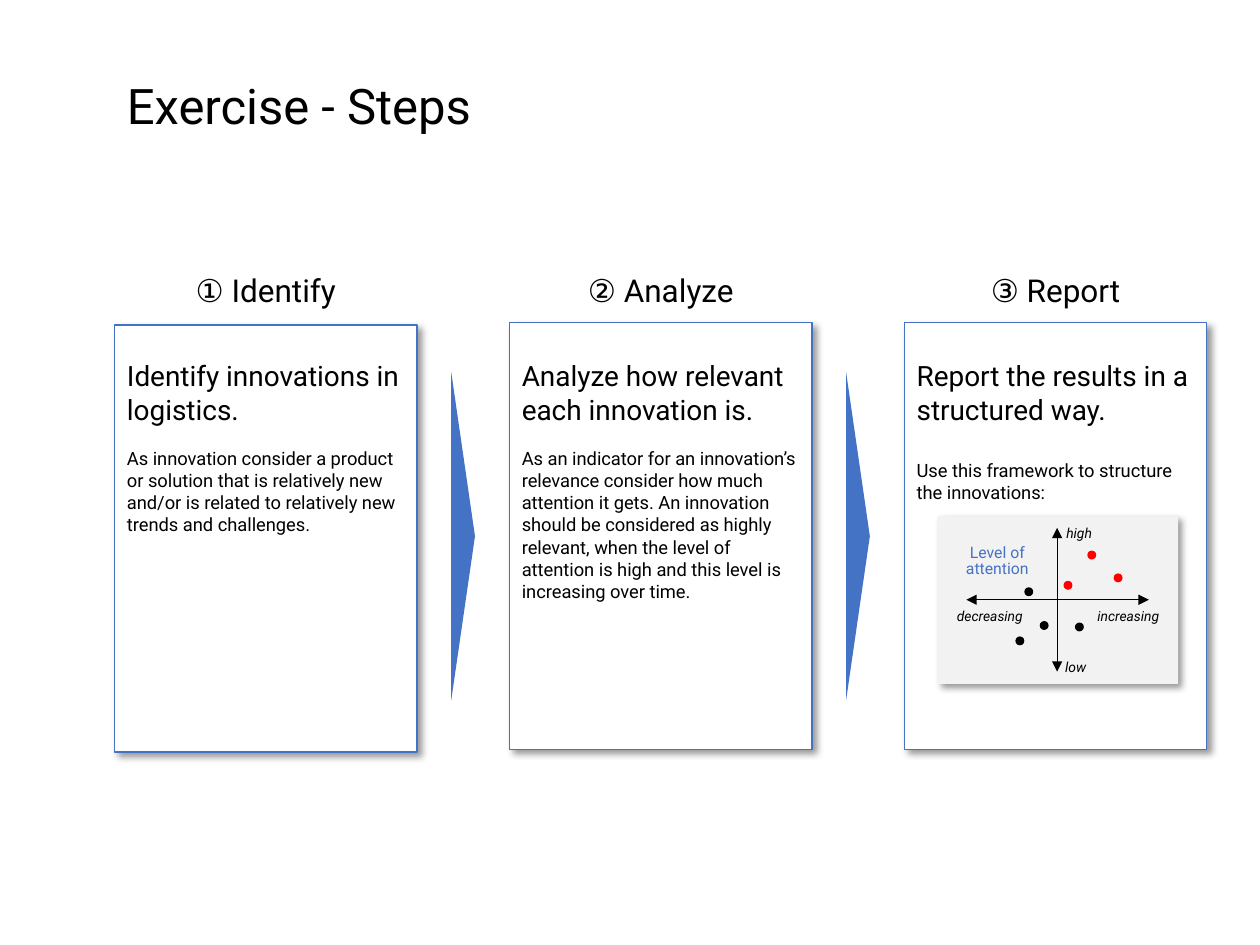
from dataclasses import dataclass

from lxml.etree import SubElement
from pptx import Presentation
from pptx.dml.color import RGBColor
from pptx.enum.shapes import MSO_CONNECTOR, MSO_SHAPE
from pptx.enum.text import MSO_ANCHOR, PP_ALIGN
from pptx.oxml.ns import qn
from pptx.util import Cm, Pt


@dataclass(frozen=True)
class Theme:
    font: str = "Roboto"
    black: str = "000000"
    white: str = "FFFFFF"
    blue: str = "4472C4"
    red: str = "FF0000"
    panel: str = "F2F2F2"
    title: float = 28
    heading: float = 18
    lead: float = 16
    body: float = 10.5
    caption: float = 9
    label: float = 7.9


THEME = Theme()
LEFT, PITCH, WIDTH = 2.31, 7.96, 6.1
CARD_HEIGHT = 8.61
STEPS = [
    ("① Identify", 6.55, "Identify innovations in logistics.", 12.3,
     "As innovation consider a product or solution that is relatively new "
     "and/or is related to relatively new trends and challenges."),
    ("② Analyze", 6.5, "Analyze how relevant each innovation is.", 12.3,
     "As an indicator for an innovation’s relevance consider how much "
     "attention it gets. An innovation should be considered as highly "
     "relevant, when the level of attention is high and this level is "
     "increasing over time."),
    ("③ Report", 6.5, "Report the results in a structured way.", 18.75,
     "Use this framework to structure the innovations:"),
]
AXIS_LABELS = [
    ("high", 20.8, 10.46),
    ("low", 20.73, 13.16),
    ("decreasing", 19, 12.12),
    ("increasing", 21.79, 12.12),
]
RED_DOTS = [(21.92, 11.1), (21.44, 11.71), (22.45, 11.56)]
BLACK_DOTS = [(20.65, 11.84), (20.47, 12.83), (21.67, 12.55), (20.96, 12.52)]


def add_shadow(sp):
    effects = sp._element.spPr.find(qn("a:effectLst"))
    shadow = SubElement(effects, qn("a:outerShdw"), blurRad=str(Pt(4)),
                        dist=str(Pt(3)), dir="2700000", algn="tl", rotWithShape="0")
    color = SubElement(shadow, qn("a:srgbClr"), val=THEME.black)
    SubElement(color, qn("a:alpha"), val="40000")


def add_box(s, kind, x, y, w, h, fill, line=None, shadow=False):
    sp = s.shapes.add_shape(kind, Cm(x), Cm(y), Cm(w), Cm(h))
    sp.shadow.inherit = False
    sp.fill.solid()
    sp.fill.fore_color.rgb = RGBColor.from_string(fill)
    if line:
        sp.line.color.rgb = RGBColor.from_string(line)
        sp.line.width = Pt(0.75)
    else:
        sp.line.fill.background()
    if shadow:
        add_shadow(sp)
    return sp


def add_run(p, text, size, color=THEME.black, italic=False):
    r = p.add_run()
    r.text = text
    r.font.name = THEME.font
    r.font.size = Pt(size)
    r.font.italic = italic
    r.font.color.rgb = RGBColor.from_string(color)


def add_text_frame(s, x, y, w, h):
    tf = s.shapes.add_textbox(Cm(x), Cm(y), Cm(w), Cm(h)).text_frame
    tf.word_wrap = True
    return tf


def add_centered(s, text, x, y, w, h, size, color=THEME.black, italic=False):
    p = add_text_frame(s, x, y, w, h).paragraphs[0]
    p.alignment = PP_ALIGN.CENTER
    add_run(p, text, size, color, italic)
    return p


def add_axis(s, x1, y1, x2, y2):
    axis = s.shapes.add_connector(MSO_CONNECTOR.STRAIGHT, Cm(x1), Cm(y1), Cm(x2), Cm(y2))
    axis.line.color.rgb = RGBColor.from_string(THEME.black)
    axis.line.width = Pt(0.5)
    ln = axis.line._get_or_add_ln()
    for end in ("a:headEnd", "a:tailEnd"):
        SubElement(ln, qn(end), type="triangle")
    SubElement(axis._element.spPr, qn("a:effectLst"))


def add_title(s, text):
    tf = add_text_frame(s, LEFT, 0.91, 16.81, 2.41)
    tf.vertical_anchor = MSO_ANCHOR.MIDDLE
    add_run(tf.paragraphs[0], text, THEME.title)


def add_step(s, x, heading, top, lead, gap, body):
    add_box(s, MSO_SHAPE.RECTANGLE, x, top, WIDTH, CARD_HEIGHT,
            THEME.white, THEME.blue, shadow=True)
    add_centered(s, heading, x, 5.33, WIDTH, 1.12, THEME.heading)
    tf = add_text_frame(s, x, 7.11, WIDTH, 4)
    add_run(tf.paragraphs[0], lead, THEME.lead)
    p = tf.add_paragraph()
    p.space_before = Pt(gap)
    add_run(p, body, THEME.body)


def add_step_arrow(s, x):
    sp = add_box(s, MSO_SHAPE.ISOSCELES_TRIANGLE, x, 10.57, 6.63, 0.48, THEME.blue)
    sp.rotation = 90


def add_framework(s):
    add_box(s, MSO_SHAPE.RECTANGLE, 18.9, 10.41, 4.85, 3.38, THEME.panel, shadow=True)
    add_axis(s, 23.16, 12.09, 19.48, 12.09)
    add_axis(s, 21.31, 10.64, 21.31, 13.54)
    for text, x, y in AXIS_LABELS:
        add_centered(s, text, x, y, 1.91, 0.64, THEME.label, italic=True)
    p = add_centered(s, "Level of attention", 19.15, 10.87, 1.91, 1.35,
                     THEME.caption, THEME.blue)
    p.line_spacing = 0.85
    for color, dots in ((THEME.red, RED_DOTS), (THEME.black, BLACK_DOTS)):
        for x, y in dots:
            add_box(s, MSO_SHAPE.OVAL, x, y, 0.18, 0.18, color)


def main():
    prs = Presentation()
    prs.slide_width, prs.slide_height = Cm(25.4), Cm(19.05)
    s = prs.slides.add_slide(prs.slide_layouts[6])
    add_title(s, "Exercise - Steps")
    for i, step in enumerate(STEPS):
        add_step(s, LEFT + i * PITCH, *step)
    for i in range(len(STEPS) - 1):
        add_step_arrow(s, 6.02 + i * PITCH)
    add_framework(s)
    prs.save("out.pptx")


if __name__ == "__main__":
    main()
